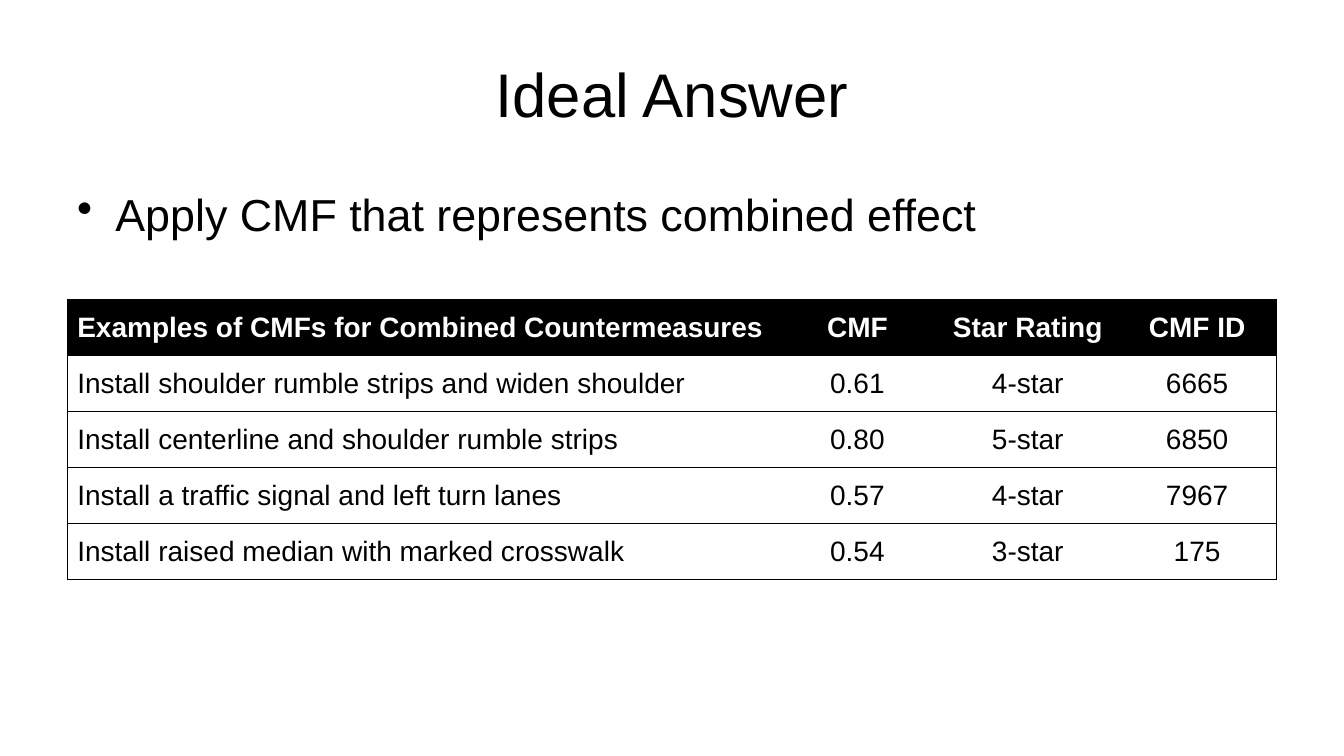
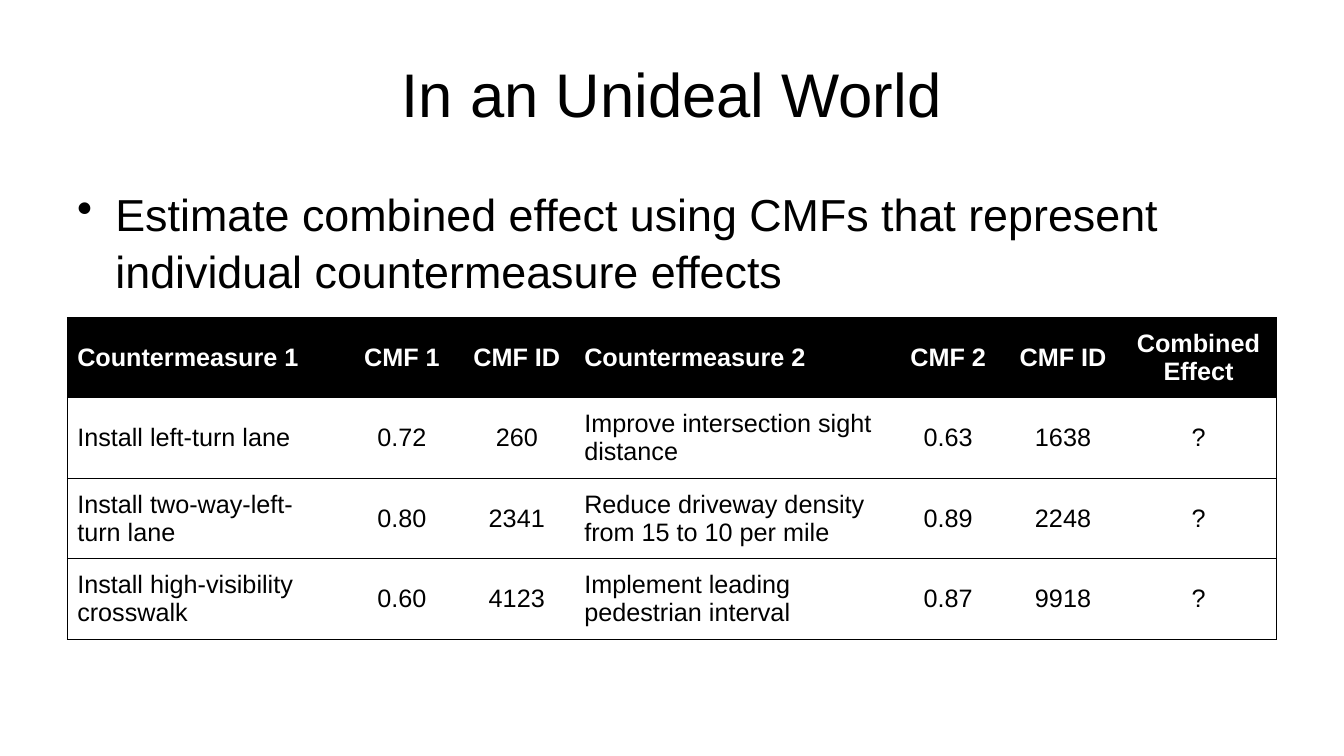
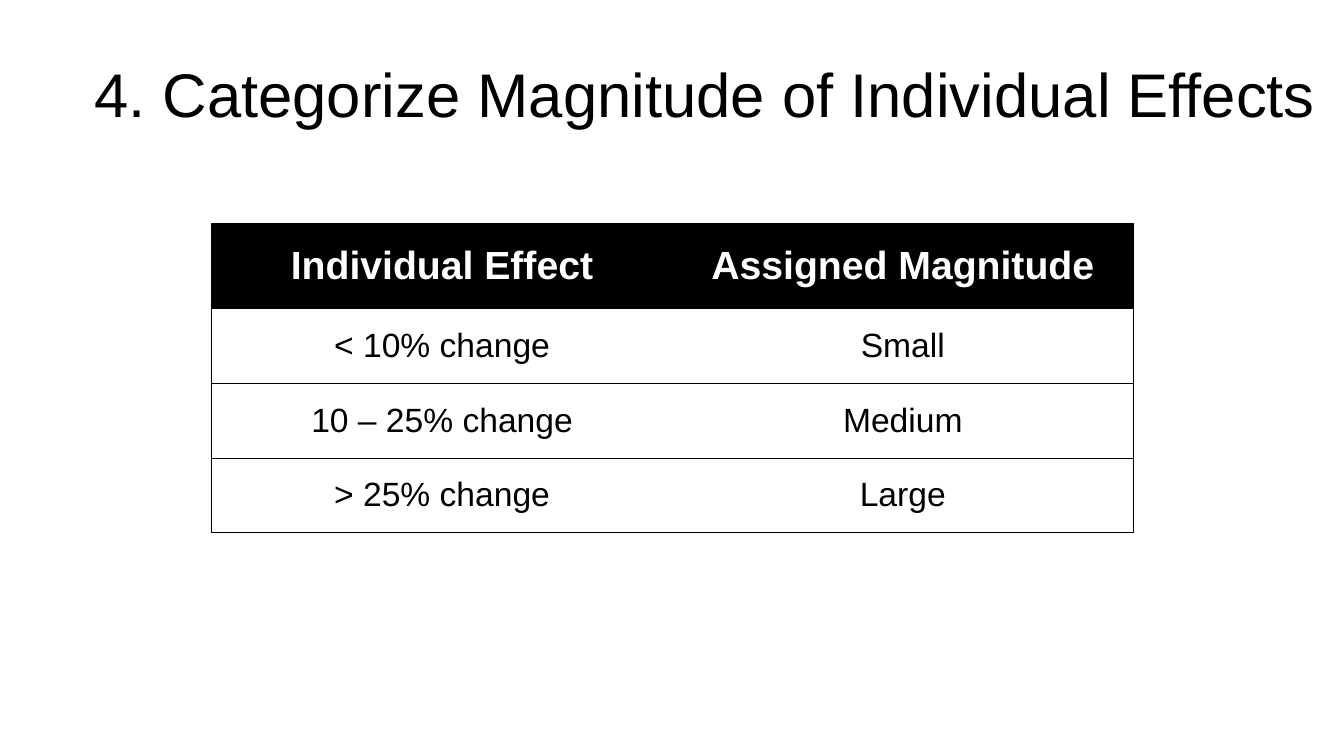
import dataclasses

import lxml.etree
import pptx
import pptx.dml.color
import pptx.enum.text
import pptx.oxml.ns
import pptx.slide
import pptx.table
import pptx.text.text
import pptx.util

WIDE, HIGH = pptx.util.Inches(13.33), pptx.util.Inches(7.5)
FONT = "Arial"
INK = {"black": "000000", "white": "FFFFFF"}
ALIGN = {
    "l": pptx.enum.text.PP_ALIGN.LEFT,
    "c": pptx.enum.text.PP_ALIGN.CENTER,
}
MIDDLE = pptx.enum.text.MSO_ANCHOR.MIDDLE
EDGE = 5
SPAN = 100 - 2 * EDGE


@dataclasses.dataclass(frozen=True)
class Grid:
    left: float
    top: float
    cols: tuple[float, ...]
    head: float
    row: float
    align: str
    sizes: tuple[int, int]
    cells: tuple[tuple[str, ...], ...]


@dataclasses.dataclass(frozen=True)
class Page:
    title: str
    grid: Grid
    point: str = ""
    span: float = SPAN


PAGES = (
    Page(
        "Ideal Answer",
        Grid(EDGE, 39.6, (52.8, 12, 13.35, 11.85), 7.41, 7.41, "lccc", (20, 20), (
            ("Examples of CMFs for Combined Countermeasures", "CMF", "Star Rating", "CMF ID"),
            ("Install shoulder rumble strips and widen shoulder", "0.61", "4-star", "6665"),
            ("Install centerline and shoulder rumble strips", "0.80", "5-star", "6850"),
            ("Install a traffic signal and left turn lanes", "0.57", "4-star", "7967"),
            ("Install raised median with marked crosswalk", "0.54", "3-star", "175"),
        )),
        "Apply CMF that represents combined effect",
    ),
    Page(
        "In an Unideal World",
        Grid(EDGE, 42, (20.63, 8.55, 8.55, 23.55, 8.55, 8.55, 11.62), 10.63, 10.63, "lcclccc", (18, 18), (
            ("Countermeasure 1", "CMF 1", "CMF ID", "Countermeasure 2", "CMF 2", "CMF ID", "Combined\nEffect"),
            ("Install left-turn lane", "0.72", "260", "Improve intersection sight distance", "0.63", "1638", "?"),
            ("Install two-way-left-turn lane", "0.80", "2341", "Reduce driveway density from 15 to 10 per mile", "0.89", "2248", "?"),
            ("Install high-visibility crosswalk", "0.60", "4123", "Implement leading pedestrian interval", "0.87", "9918", "?"),
        )),
        "Estimate combined effect using CMFs that represent individual countermeasure effects",
    ),
    Page(
        "4. Categorize Magnitude of Individual Effects",
        Grid(15.75, 29.6, (34.28, 34.28), 11.24, 9.87, "cc", (28, 24), (
            ("Individual Effect", "Assigned Magnitude"),
            ("< 10% change", "Small"),
            ("10 – 25% change", "Medium"),
            ("> 25% change", "Large"),
        )),
        span=100 - EDGE,
    ),
)


def across(share: float) -> int:
    return round(WIDE * share / 100)


def down(share: float) -> int:
    return round(HIGH * share / 100)


def paint(ink: str) -> pptx.dml.color.RGBColor:
    return pptx.dml.color.RGBColor.from_string(INK[ink])


def write(frame: pptx.text.text.TextFrame, text: str, size: int,
          align: str, ink: str = "black", bold: bool = False) -> None:
    frame.text = text
    frame.word_wrap = True
    for para in frame.paragraphs:
        para.alignment = ALIGN[align]
        for run in para.runs:
            run.font.name = FONT
            run.font.size = pptx.util.Pt(size)
            run.font.bold = bold
            run.font.color.rgb = paint(ink)


def add_box(slide: pptx.slide.Slide, top: float, width: float,
            height: float) -> pptx.text.text.TextFrame:
    box = slide.shapes.add_textbox(across(EDGE), down(top), across(width), down(height))
    return box.text_frame


def add_title(slide: pptx.slide.Slide, text: str, span: float) -> None:
    frame = add_box(slide, 4, span, 16.67)
    frame.vertical_anchor = MIDDLE
    write(frame, text, 44, "c")


def add_point(slide: pptx.slide.Slide, text: str) -> None:
    frame = add_box(slide, 23.75, SPAN, 66)
    write(frame, text, 32, "l")
    para = frame.paragraphs[0]
    para.line_spacing = 1.05
    props = para._p.get_or_add_pPr()
    dent = pptx.util.Inches(0.38)
    props.set("marL", str(dent))
    props.set("indent", str(-dent))
    mark = lxml.etree.SubElement(props, pptx.oxml.ns.qn("a:buChar"))
    mark.set("char", "•")


def add_rules(cell: pptx.table._Cell, first: bool, last: bool) -> None:
    props = cell._tc.get_or_add_tcPr()
    for side, shown in (("L", first), ("R", last), ("T", True), ("B", True)):
        line = lxml.etree.SubElement(props, pptx.oxml.ns.qn("a:ln" + side))
        line.set("w", str(pptx.util.Pt(0.75)))
        if shown:
            fill = lxml.etree.SubElement(line, pptx.oxml.ns.qn("a:solidFill"))
            lxml.etree.SubElement(fill, pptx.oxml.ns.qn("a:srgbClr")).set("val", INK["black"])
        else:
            lxml.etree.SubElement(line, pptx.oxml.ns.qn("a:noFill"))


def add_grid(slide: pptx.slide.Slide, grid: Grid) -> None:
    count = len(grid.cells)
    tall = grid.head + grid.row * (count - 1)
    table = slide.shapes.add_table(
        count, len(grid.cols), across(grid.left), down(grid.top),
        across(sum(grid.cols)), down(tall)).table
    table.first_row = table.horz_banding = False
    for col, width in zip(table.columns, grid.cols):
        col.width = across(width)
    for down_at, texts in enumerate(grid.cells):
        head = down_at == 0
        table.rows[down_at].height = down(grid.head if head else grid.row)
        for at, text in enumerate(texts):
            cell = table.cell(down_at, at)
            cell.vertical_anchor = MIDDLE
            add_rules(cell, at == 0, at == len(texts) - 1)
            cell.fill.solid()
            cell.fill.fore_color.rgb = paint("black" if head else "white")
            write(cell.text_frame, text, grid.sizes[0 if head else 1],
                  grid.align[at], "white" if head else "black", head)


def main() -> None:
    deck = pptx.Presentation()
    deck.slide_width, deck.slide_height = WIDE, HIGH
    for page in PAGES:
        slide = deck.slides.add_slide(deck.slide_layouts[6])
        add_title(slide, page.title, page.span)
        if page.point:
            add_point(slide, page.point)
        add_grid(slide, page.grid)
    deck.save("out.pptx")


if __name__ == "__main__":
    main()
